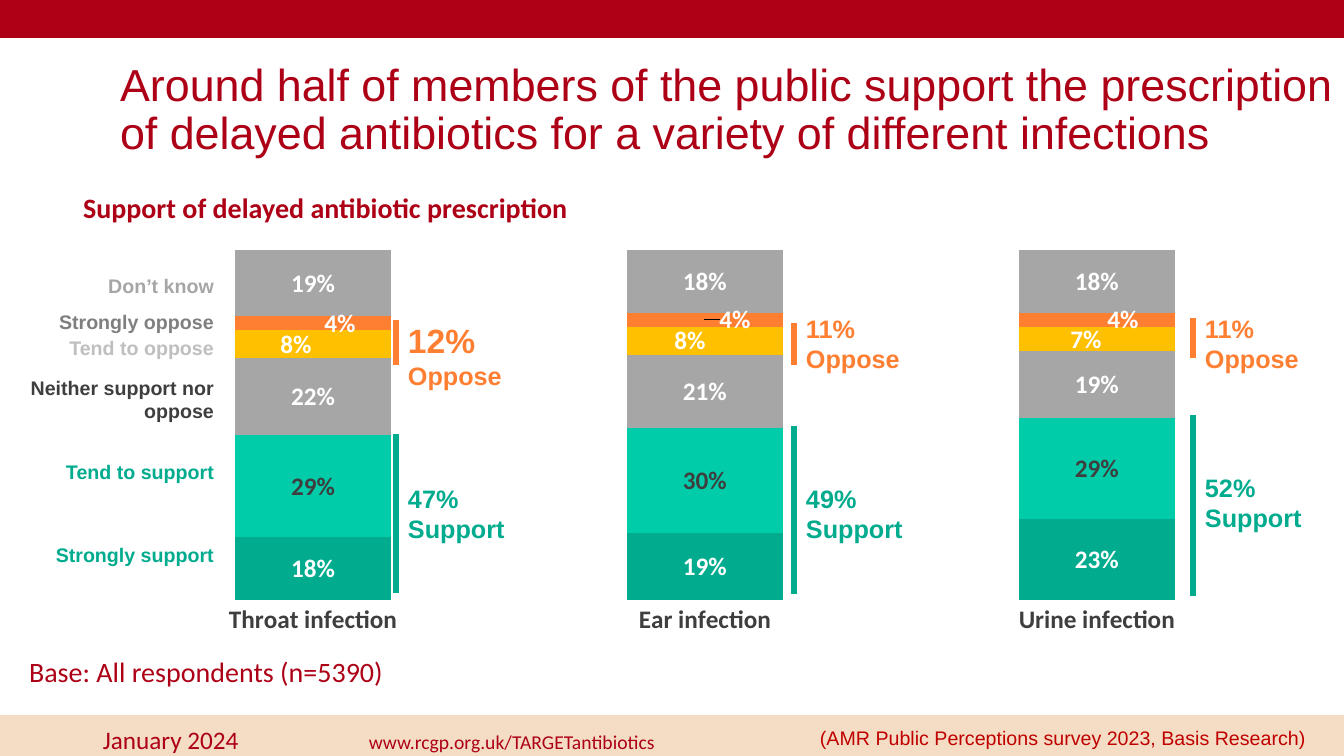
from lxml import etree
from pptx import Presentation
from pptx.chart.data import CategoryChartData
from pptx.dml.color import RGBColor
from pptx.enum.chart import XL_CHART_TYPE, XL_LABEL_POSITION, XL_TICK_MARK
from pptx.enum.shapes import MSO_CONNECTOR, MSO_SHAPE
from pptx.enum.text import MSO_ANCHOR, MSO_AUTO_SIZE, PP_ALIGN
from pptx.oxml.ns import qn
from pptx.util import Emu, Pt

STACKED = XL_CHART_TYPE.COLUMN_STACKED_100
CENTER = XL_LABEL_POSITION.CENTER
NO_TICK = XL_TICK_MARK.NONE
STRAIGHT = MSO_CONNECTOR.STRAIGHT
RECTANGLE = MSO_SHAPE.RECTANGLE
TOP, MIDDLE = MSO_ANCHOR.TOP, MSO_ANCHOR.MIDDLE
NO_FIT = MSO_AUTO_SIZE.NONE
LEFT, RIGHT = PP_ALIGN.LEFT, PP_ALIGN.RIGHT

CRIMSON = RGBColor(0xAD, 0x00, 0x16)
RED = RGBColor(0xC0, 0x00, 0x00)
SAND = RGBColor(0xF4, 0xDD, 0xC4)
GREEN = RGBColor(0x00, 0xAB, 0x8E)
MINT = RGBColor(0x00, 0xCC, 0xAA)
ORANGE = RGBColor(0xFF, 0x7F, 0x32)
AMBER = RGBColor(0xFF, 0xC0, 0x00)
GREY = RGBColor(0xA6, 0xA6, 0xA6)
PALE_GREY = RGBColor(0xBF, 0xBF, 0xBF)
MID_GREY = RGBColor(0x7F, 0x7F, 0x7F)
CHARCOAL = RGBColor(0x3E, 0x3E, 0x3E)
WHITE = RGBColor(0xFF, 0xFF, 0xFF)

SLIDE_W, SLIDE_H = 1344, 756
EMU_PER_PX = 12192000 / SLIDE_W
COMPARISON_LAYOUT = 4

INFECTIONS = ["Throat infection", "Ear infection", "Urine infection"]
ANSWERS = [
    ("Series 1", (0.18, 0.19, 0.23), GREEN, WHITE, None),
    ("Series 2", (0.29, 0.30, 0.29), MINT, CHARCOAL, None),
    ("Series 3", (0.22, 0.21, 0.19), GREY, WHITE, None),
    ("Series 4", (0.08, 0.08, 0.07), AMBER, WHITE, (-17, -15, -11)),
    ("Series 5", (0.04, 0.04, 0.04), ORANGE, WHITE, (27, 30, 26)),
    ("Series 6", (0.19, 0.18, 0.18), GREY, WHITE, None),
]
ANSWER_LABELS = [
    ("Strongly support", -109, 535, 333, 40, GREEN),
    ("Tend to support", -109, 452, 333, 40, GREEN),
    ("Neither support nor oppose", -43, 376, 267, 46, CHARCOAL),
    ("Tend to oppose", -109, 328, 333, 40, PALE_GREY),
    ("Strongly oppose", -213, 298, 437, 47, MID_GREY),
    ("Don’t know", -79, 266, 303, 40, GREY),
]
TOTALS = [
    (396, "47%", "Support", GREEN, 434, 593, 483, 18),
    (396, "12%", "Oppose", ORANGE, 320, 365, 320, 24),
    (794, "49%", "Support", GREEN, 426, 594, 483, 18),
    (794, "11%", "Oppose", ORANGE, 323, 365, 313, 18),
    (1193, "52%", "Support", GREEN, 415, 596, 472, 18),
    (1193, "11%", "Oppose", ORANGE, 318, 358, 313, 18),
]


def px(length):
    return Emu(round(length * EMU_PER_PX))


def manual_layout(**settings):
    layout = etree.Element(qn("c:layout"))
    manual = etree.SubElement(layout, qn("c:manualLayout"))
    for name, value in settings.items():
        etree.SubElement(manual, qn("c:" + name)).set("val", str(value))
    return layout


class SurveySlide:
    def __init__(self, presentation):
        layout = presentation.slide_layouts[COMPARISON_LAYOUT]
        self.slide = presentation.slides.add_slide(layout)
        self.shapes = self.slide.shapes

    def style(self, font, size, color, bold=False, face="Arial"):
        font.name, font.size, font.bold = face, Pt(size), bold
        font.color.rgb = color

    def band(self, top, height, color):
        band = self.shapes.add_shape(RECTANGLE, 0, px(top), px(SLIDE_W), px(height))
        band.shadow.inherit = False
        band.fill.solid()
        band.fill.fore_color.rgb = color
        band.line.color.rgb = color
        band.line.width = Pt(1)
        self.shapes._spTree.insert(2, band._element)

    def placeholder(self, idx, box, text, size, bold=False, face="Calibri"):
        holder = self.slide.placeholders[idx]
        holder.left, holder.top, holder.width, holder.height = map(px, box)
        frame = holder.text_frame
        frame.text = text
        frame.auto_size = NO_FIT
        frame.vertical_anchor = MIDDLE
        paragraph = frame.paragraphs[0]
        paragraph.alignment = LEFT
        paragraph.line_spacing = 0.9
        paragraph.space_before = Pt(0)
        self.style(paragraph.runs[0].font, size, CRIMSON, bold, face)

    def drop_placeholder(self, idx):
        element = self.slide.placeholders[idx]._element
        element.getparent().remove(element)

    def text(self, box, lines, color, bold=False, align=LEFT, anchor=TOP, inset=True):
        frame = self.shapes.add_textbox(*map(px, box)).text_frame
        frame.word_wrap = True
        frame.vertical_anchor = anchor
        if not inset:
            frame.margin_left = frame.margin_right = 0
            frame.margin_top = frame.margin_bottom = 0
        frame.text = "\n".join(line for line, _ in lines)
        for paragraph, (_, size) in zip(frame.paragraphs, lines):
            paragraph.alignment = align
            self.style(paragraph.runs[0].font, size, color, bold)

    def tabbed_text(self, box, tab, parts):
        frame = self.shapes.add_textbox(*map(px, box)).text_frame
        frame.word_wrap = True
        paragraph = frame.paragraphs[0]
        tabs = etree.SubElement(paragraph._p.get_or_add_pPr(), qn("a:tabLst"))
        etree.SubElement(tabs, qn("a:tab"), pos=str(px(tab)), algn="l")
        for words, size in parts:
            run = paragraph.add_run()
            run.text = words
            self.style(run.font, size, CRIMSON, face="Calibri")

    def bracket(self, x, top, bottom, color):
        bracket = self.shapes.add_connector(STRAIGHT, px(x), px(top), px(x), px(bottom))
        bracket.line.color.rgb = color
        bracket.line.width = Pt(4.5)
        etree.SubElement(bracket._element.spPr, qn("a:effectLst"))

    def chart(self, box, plot_box):
        data = CategoryChartData(number_format="0%")
        data.categories = INFECTIONS
        for name, values, *_ in ANSWERS:
            data.add_series(name, values)
        chart = self.shapes.add_chart(STACKED, *map(px, box), data).chart
        chart.has_legend = chart.has_title = False
        self.style(chart.font, 10, WHITE, True, "Calibri")

        left, top, width, height = box
        plot_left, plot_top, plot_width, plot_height = plot_box
        plot_area = chart._chartSpace.chart.plotArea
        for old in plot_area.findall(qn("c:layout")):
            plot_area.remove(old)
        plot_area.insert(0, manual_layout(
            layoutTarget="inner", xMode="edge", yMode="edge",
            x=round((plot_left - left) / width, 4), y=round((plot_top - top) / height, 4),
            w=round(plot_width / width, 4), h=round(plot_height / height, 4)))

        infections = chart.category_axis
        infections.major_tick_mark = infections.minor_tick_mark = NO_TICK
        infections.format.line.fill.background()
        self.style(infections.tick_labels.font, 18, CHARCOAL, True, "Calibri")
        shares = chart.value_axis
        shares.minimum_scale, shares.maximum_scale = 0, 1
        shares.has_major_gridlines = False
        shares.visible = False

        plot = chart.plots[0]
        plot.gap_width, plot.overlap = 150, 100
        plot.vary_by_categories = False
        for series, (_, _, fill, label_color, shifts) in zip(plot.series, ANSWERS):
            series.format.fill.solid()
            series.format.fill.fore_color.rgb = fill
            labels = series.data_labels
            labels.show_value = True
            labels.number_format, labels.number_format_is_linked = "0%", False
            labels.position = CENTER
            self.style(labels.font, 18, label_color, True, "Calibri")
            for index, shift in enumerate(shifts or ()):
                label = series.points[index].data_label
                label.position = CENTER
                self.style(label.font, 18, label_color, True, "Calibri")
                element = series._element.xpath("c:dLbls/c:dLbl")[index]
                element.insert(1, manual_layout(x=round(shift / width, 4), y=0))


def main():
    presentation = Presentation()
    presentation.slide_width, presentation.slide_height = px(SLIDE_W), px(SLIDE_H)
    survey = SurveySlide(presentation)
    survey.band(-1, 38, CRIMSON)
    survey.band(716, 40, SAND)
    survey.placeholder(0, (110, 25, 1250, 172),
                       "Around half of members of the public support the prescription "
                       "of delayed antibiotics for a variety of different infections",
                       32, face="Arial")
    survey.placeholder(1, (73, 190, 822, 38),
                       "Support of delayed antibiotic prescription", 20, bold=True)
    survey.placeholder(3, (19, 653, 928, 40), "Base: All respondents (n=5390)", 20)
    survey.drop_placeholder(2)
    survey.drop_placeholder(4)
    survey.chart((93, 242, 1227, 401), (117, 250, 1176, 350))
    for answer, left, top, width, height, color in ANSWER_LABELS:
        survey.text((left, top, width, height), [(answer, 14)], color, True, RIGHT, MIDDLE)
    for x, share, stance, color, top, bottom, text_top, size in TOTALS:
        survey.bracket(x, top, bottom, color)
        survey.text((x + 12, text_top, 201, 60), [(share, size), (stance, 18)],
                    color, True, inset=False)
    survey.text((793, 721, 523, 34),
                [("(AMR Public Perceptions survey 2023, Basis Research)", 14)], RED, align=RIGHT)
    survey.tabbed_text((93, 719, 666, 50), 266,
                       [("January 2024\t", 18), ("www.rcgp.org.uk/TARGETantibiotics", 14)])
    presentation.save("out.pptx")


if __name__ == "__main__":
    main()
